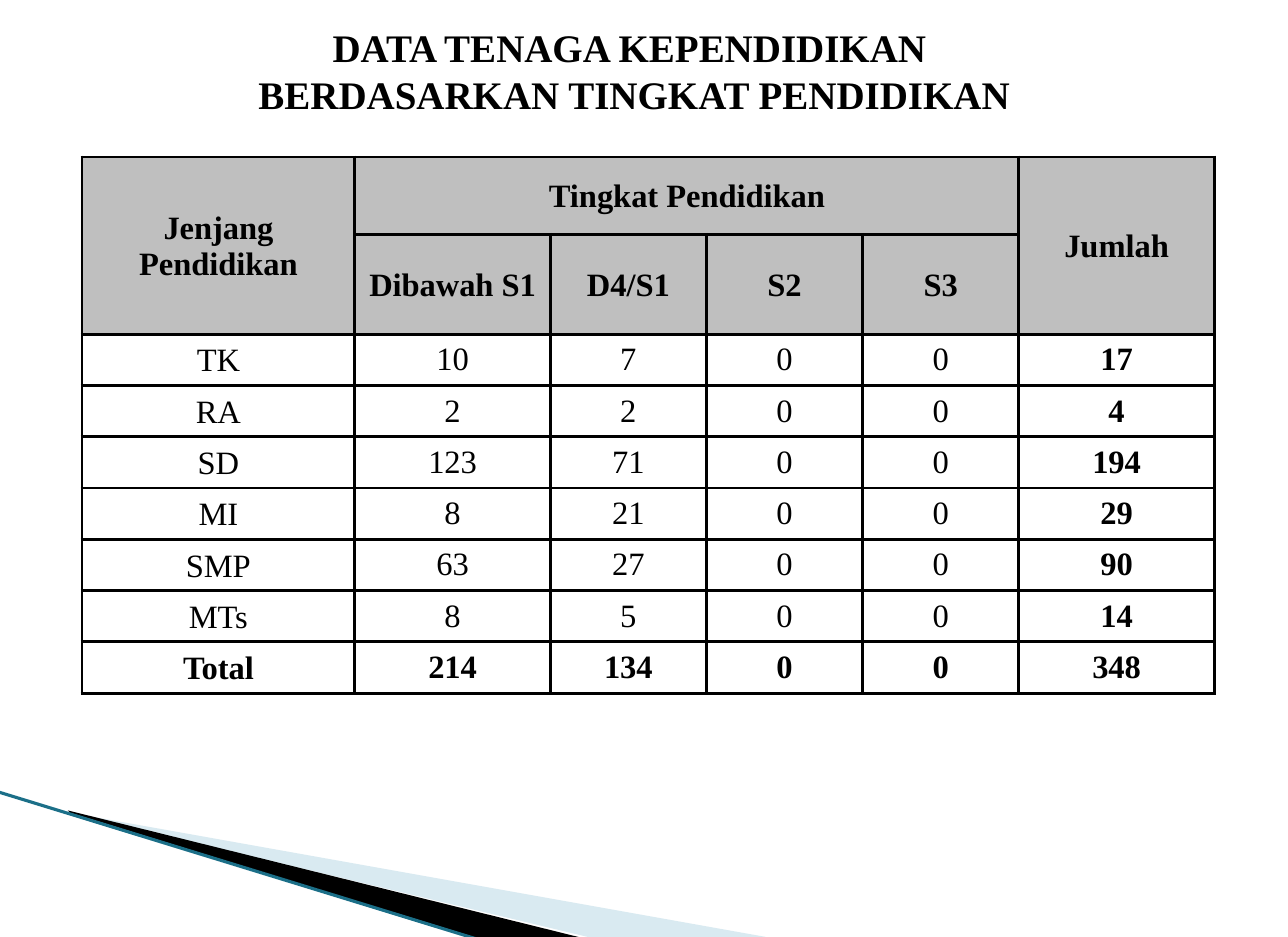
import pptx
import pptx.dml.color
import pptx.enum.shapes
import pptx.enum.text
import pptx.oxml
import pptx.oxml.ns
import pptx.util
from lxml import etree

UNIT = pptx.util.Inches(0.05)
COLORS = {"text": "000000", "header": "BFBFBF", "body": "FFFFFF",
          "border": "000000", "pale": "A0CBDC", "dark": "000000", "edge": "1B6F88"}
TITLE = ["DATA TENAGA KEPENDIDIKAN ", "BERDASARKAN TINGKAT PENDIDIKAN"]
COLUMNS = [23.3, 16.7, 13.34, 13.34, 13.34, 16.7]
ROWS = [6.6, 8.54] + [4.38] * 7
HEADERS = [
    ["Jenjang Pendidikan", "Tingkat Pendidikan", "", "", "", "Jumlah"],
    ["", "Dibawah S1", "D4/S1", "S2", "S3", ""],
]
RECORDS = [
    ["TK", 10, 7, 0, 0, 17],
    ["RA", 2, 2, 0, 0, 4],
    ["SD", 123, 71, 0, 0, 194],
    ["MI", 8, 21, 0, 0, 29],
    ["SMP", 63, 27, 0, 0, 90],
    ["MTs", 8, 5, 0, 0, 14],
    ["Total", 214, 134, 0, 0, 348],
]
MERGES = [((0, 0), (1, 0)), ((0, 1), (0, 4)), ((0, 5), (1, 5))]
LABEL_MARGINS = (0.01, 0.01, 0.01, 0)
NUMBER_MARGINS = (0.07, 0, 0.07, 0)


def grid(value):
    return pptx.util.Emu(round(value * UNIT))


def color(name):
    return pptx.dml.color.RGBColor.from_string(COLORS[name])


def set_values(target, values):
    for name, value in values.items():
        setattr(target, name, value)


def set_margins(target, margins):
    sides = ("margin_left", "margin_top", "margin_right", "margin_bottom")
    set_values(target, dict(zip(sides, map(pptx.util.Inches, margins))))


def write_paragraph(paragraph, text, size, bold):
    paragraph.alignment = pptx.enum.text.PP_ALIGN.CENTER
    run = paragraph.add_run()
    run.text = text
    set_values(run.font, {"name": "Times New Roman", "size": pptx.util.Pt(size), "bold": bold})
    run.font.color.rgb = color("text")


def add_wedge(slide, points, fill, opacity=100):
    corners = [(grid(x), grid(y)) for x, y in points]
    builder = slide.shapes.build_freeform(*corners[0])
    builder.add_line_segments(corners[1:], close=True)
    shape = builder.convert_to_shape()
    shape.shadow.inherit = False
    shape.line.fill.background()
    shape.fill.solid()
    shape.fill.fore_color.rgb = color(fill)
    if opacity < 100:
        fill_color = shape.fill._xPr.find(".//" + pptx.oxml.ns.qn("a:srgbClr"))
        etree.SubElement(fill_color, pptx.oxml.ns.qn("a:alpha"), val=str(opacity * 1000))


def add_edge(slide, start, end):
    connector = slide.shapes.add_connector(
        pptx.enum.shapes.MSO_CONNECTOR.STRAIGHT, *map(grid, start + end))
    connector.line.color.rgb = color("edge")
    connector.line.width = pptx.util.Pt(0.95)
    etree.SubElement(connector._element.spPr, pptx.oxml.ns.qn("a:effectLst"))


def add_title(slide):
    frame = slide.shapes.add_textbox(*map(grid, (5, 5, 98.4, 5))).text_frame
    set_margins(frame, (0, 0.03, 0, 0))
    set_values(frame, {"word_wrap": True,
                       "vertical_anchor": pptx.enum.text.MSO_ANCHOR.BOTTOM})
    for index, text in enumerate(TITLE):
        paragraph = frame.add_paragraph() if index else frame.paragraphs[0]
        write_paragraph(paragraph, text, 12, True)


def add_borders(cell):
    properties = cell._tc.get_or_add_tcPr()
    for index, side in enumerate(("lnL", "lnR", "lnT", "lnB")):
        properties.insert(index, pptx.oxml.parse_xml(
            f'<a:{side} {pptx.oxml.ns.nsdecls("a")} w="12700"><a:solidFill>'
            f'<a:srgbClr val="{COLORS["border"]}"/></a:solidFill></a:{side}>'))


def format_cell(cell, value, fill, bold, margins):
    set_margins(cell, margins)
    cell.vertical_anchor = pptx.enum.text.MSO_ANCHOR.MIDDLE
    if fill:
        cell.fill.solid()
        cell.fill.fore_color.rgb = color(fill)
    else:
        cell.fill.background()
    add_borders(cell)
    write_paragraph(cell.text_frame.paragraphs[0], str(value), 10, bold)


def add_staff_table(slide):
    table = slide.shapes.add_table(
        len(ROWS), len(COLUMNS), grid(7), grid(13.4),
        grid(sum(COLUMNS)), grid(sum(ROWS))).table
    for column, width in zip(table.columns, COLUMNS):
        column.width = grid(width)
    for row, height in zip(table.rows, ROWS):
        row.height = grid(height)
    for start, end in MERGES:
        table.cell(*start).merge(table.cell(*end))
    for row, values in enumerate(HEADERS + RECORDS):
        header = row < len(HEADERS)
        for column, value in enumerate(values):
            label = header or column == 0
            fill = "header" if header else "body" if label else None
            bold = header or row == len(ROWS) - 1 or column == len(COLUMNS) - 1
            format_cell(table.cell(row, column), value, fill, bold,
                        LABEL_MARGINS if label else NUMBER_MARGINS)


def main():
    presentation = pptx.Presentation()
    set_values(presentation, {"slide_width": grid(110), "slide_height": grid(80)})
    slide = presentation.slides.add_slide(presentation.slide_layouts[6])
    add_wedge(slide, [(6, 69.4), (65.4, 80), (50.2, 80)], "pale", 40)
    add_wedge(slide, [(5.8, 69.2), (50.2, 80.2), (41, 80.2), (6, 69.4)], "dark")
    add_edge(slide, (-0.2, 67.6), (40.8, 80.2))
    add_title(slide)
    add_staff_table(slide)
    presentation.save("out.pptx")


if __name__ == "__main__":
    main()
